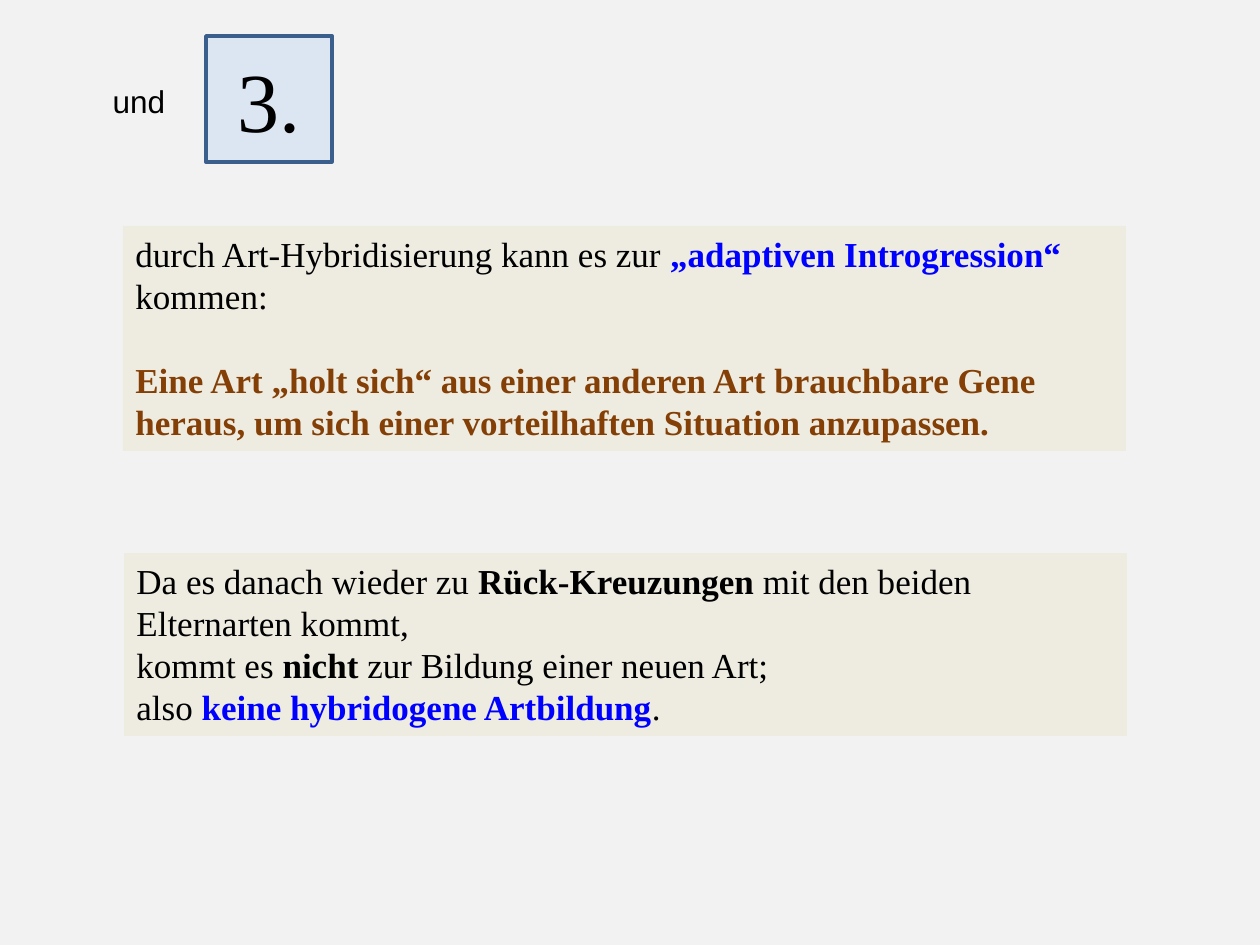
from pptx import Presentation
from pptx.dml.color import RGBColor
from pptx.enum.shapes import MSO_SHAPE
from pptx.enum.text import MSO_ANCHOR, PP_ALIGN
from pptx.util import Emu, Pt

RECT = MSO_SHAPE.RECTANGLE
TOP, MIDDLE = MSO_ANCHOR.TOP, MSO_ANCHOR.MIDDLE
LEFT, CENTER = PP_ALIGN.LEFT, PP_ALIGN.CENTER

BLACK = RGBColor(0x00, 0x00, 0x00)
BLUE = RGBColor(0x00, 0x00, 0xFF)
BROWN = RGBColor(0x84, 0x3F, 0x06)
GREY = RGBColor(0xF2, 0xF2, 0xF2)
CREAM = RGBColor(0xEE, 0xEC, 0xE1)
PALE = RGBColor(0xDC, 0xE6, 0xF2)
NAVY = RGBColor(0x3A, 0x5F, 0x8C)

SERIF, SANS = "Times New Roman", "Arial"
PX = 914400 // 126

# Each paragraph is a list of runs: text, colour, bold
THESIS = [
    [("durch Art-Hybridisierung kann es zur ", BLACK, False),
     ("„adaptiven Introgression“ ", BLUE, True),
     ("kommen:", BLACK, False)],
    [("Eine Art „holt sich“ aus einer anderen Art brauchbare Gene heraus, "
      "um sich einer vorteilhaften Situation anzupassen.", BROWN, True)],
]
RESULT = [
    [("Da es danach wieder zu ", BLACK, False),
     ("Rück-Kreuzungen", BLACK, True),
     (" mit den beiden Elternarten kommt,", BLACK, False)],
    [("kommt es ", BLACK, False),
     ("nicht", BLACK, True),
     (" zur Bildung einer neuen Art;", BLACK, False)],
    [("also ", BLACK, False),
     ("keine hybridogene Artbildung", BLUE, True),
     (".", BLACK, False)],
]
NUMBER = [[("3.", BLACK, False)]]
LINK = [[("und", BLACK, False)]]


def place(box):
    return [Emu(n * PX) for n in box]


def write(shape, paras, size, font=SERIF, align=LEFT, anchor=TOP, gap=0):
    frame = shape.text_frame
    frame.word_wrap = True
    frame.vertical_anchor = anchor
    for i, runs in enumerate(paras):
        para = frame.add_paragraph() if i else frame.paragraphs[0]
        para.alignment = align
        if i and gap:
            para.space_before = Pt(gap)
        for text, color, bold in runs:
            run = para.add_run()
            run.text = text
            run.font.name = font
            run.font.size = Pt(size)
            run.font.bold = bold
            run.font.color.rgb = color


def add_panel(slide, box, fill, edge=None):
    panel = slide.shapes.add_shape(RECT, *place(box))
    panel.shadow.inherit = False
    panel.fill.solid()
    panel.fill.fore_color.rgb = fill
    if edge is None:
        panel.line.fill.background()
    else:
        panel.line.color.rgb = edge
        panel.line.width = Pt(2)
    return panel


def main():
    deck = Presentation()
    deck.slide_width, deck.slide_height = place((1260, 945))
    slide = deck.slides.add_slide(deck.slide_layouts[6])
    slide.background.fill.solid()
    slide.background.fill.fore_color.rgb = GREY

    thesis = add_panel(slide, (123, 226, 1003, 225), CREAM)
    write(thesis, THESIS, 20, gap=24)
    badge = add_panel(slide, (206, 36, 126, 126), PALE, NAVY)
    write(badge, NUMBER, 48, align=CENTER, anchor=MIDDLE)
    result = add_panel(slide, (124, 553, 1003, 183), CREAM)
    write(result, RESULT, 20)
    link = slide.shapes.add_textbox(*place((84, 76, 110, 50)))
    write(link, LINK, 18, SANS, CENTER)

    deck.save("out.pptx")


if __name__ == "__main__":
    main()
